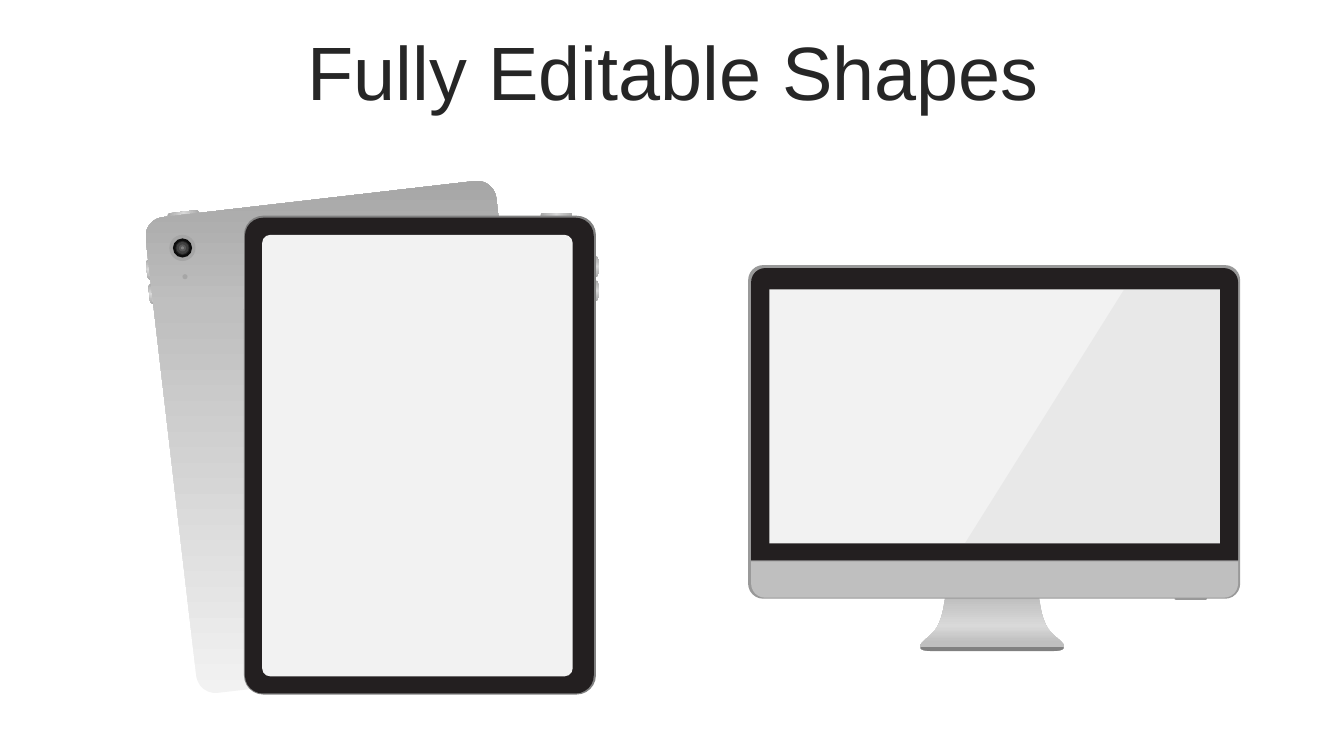
from pptx import Presentation
from pptx.dml.color import RGBColor
from pptx.enum.shapes import MSO_SHAPE
from pptx.enum.text import MSO_ANCHOR, PP_ALIGN
from pptx.oxml import parse_xml
from pptx.oxml.ns import qn
from pptx.util import Inches, Pt
from lxml import etree

NS = "http://schemas.openxmlformats.org/drawingml/2006/main"
INK, BLACK = RGBColor(0x26, 0x26, 0x26), RGBColor(0x23, 0x1F, 0x20)
EDGE, RIM = RGBColor(0x80, 0x80, 0x80), RGBColor(0x99, 0x99, 0x99)
SILVER, GLASS = RGBColor(0xBF, 0xBF, 0xBF), RGBColor(0xF2, 0xF2, 0xF2)
LENS = RGBColor(0xA6, 0xA6, 0xA6)
ROUND, TABBED, OVAL = (MSO_SHAPE.ROUNDED_RECTANGLE, MSO_SHAPE.ROUND_2_SAME_RECTANGLE,
                       MSO_SHAPE.OVAL)

# Gradients: angle, then (percent, colour) stops
METAL = [(0, "A6A6A6"), (25, "BFBFBF"), (50, "D9D9D9"), (75, "BFBFBF"), (100, "A6A6A6")]
ACROSS, UPWARD = (0, METAL), (270, METAL)
SHELL = (90, [(0, "F2F2F2"), (75, "BFBFBF"), (100, "A6A6A6")])
STEEL = (270, [(0, "BFBFBF"), (53, "D9D9D9"), (83, "BFBFBF"), (100, "BFBFBF")])

TITLE = "Fully Editable Shapes"
TILT = -6.6

# Tablet parts: left, top, width, height, corner radius, fill
REAR = [
    (1.66, 2.10, 0.32, 0.11, 0.03, ACROSS),
    (1.48, 2.81, 0.08, 0.21, 0.04, UPWARD),
    (1.455, 2.57, 0.08, 0.21, 0.04, UPWARD),
    (1.685, 1.96, 3.5, 4.75, 0.19, SHELL),
]
FRONT = [
    (5.36, 2.11, 0.32, 0.11, 0.03, ACROSS),
    (5.86, 2.78, 0.08, 0.21, 0.04, UPWARD),
    (5.86, 2.54, 0.08, 0.21, 0.04, UPWARD),
    (2.42, 2.14, 3.49, 4.75, 0.19, EDGE),
    (2.43, 2.16, 3.46, 4.72, 0.18, BLACK),
    (2.6, 2.33, 3.08, 4.38, 0.08, GLASS),
]
# Camera rings: diameter and grey level, around one centre
CAMERA = (1.81, 2.46)
RINGS = [(0.26, 0xA6), (0.19, 0x0D), (0.14, 0x26), (0.12, 0x40), (0.07, 0x59), (0.03, 0x80)]
MIC = (1.81, 2.72, 0.05, 0.05)

# Monitor: the stand and foot are Bezier halves, x measured from the axis
AXIS = 9.84
STAND = [[(0.47, 5.93), (0.47, 5.93), (0.48, 6.16), (0.58, 6.27)],
         [(0.58, 6.27), (0.68, 6.37), (0.84, 6.46), (0.56, 6.46)]]
FOOT = [[(0.71, 6.42), (0.71, 6.45), (0.67, 6.46), (0.56, 6.46)]]
GLARE = [(11.15, 2.87), (12.1, 2.87), (12.1, 5.39), (9.57, 5.39)]


def paint(shape, fill):
    """Fill with a plain colour or an (angle, stops) gradient, with no outline."""
    shape.shadow.inherit = False
    shape.line.fill.background()
    if isinstance(fill, RGBColor):
        shape.fill.solid()
        shape.fill.fore_color.rgb = fill
        return
    angle, stops = fill
    marks = "".join(f'<a:gs pos="{at * 1000}"><a:srgbClr val="{tone}"/></a:gs>'
                    for at, tone in stops)
    turn = (360 - angle) % 360 * 60000
    grad = parse_xml(f'<a:gradFill xmlns:a="{NS}" rotWithShape="0"><a:gsLst>{marks}</a:gsLst>'
                     f'<a:lin ang="{turn}" scaled="0"/></a:gradFill>')
    shape.fill.background()
    old = shape._element.spPr.find(qn("a:noFill"))
    old.getparent().replace(old, grad)


def place(group, kind, box, fill, corners=(), tilt=0):
    """Add a preset shape; corners are radii in inches."""
    shape = group.shapes.add_shape(kind, *map(Inches, box))
    for i, size in enumerate(corners):
        shape.adjustments[i] = size / min(box[2:])
    shape.rotation = tilt
    paint(shape, fill)


def outline(group, points, fill):
    dots = [(Inches(x), Inches(y)) for x, y in points]
    pen = group.shapes.build_freeform(*dots[0], scale=1.0)
    pen.add_line_segments(dots[1:], close=True)
    shape = pen.convert_to_shape()
    paint(shape, fill)
    return shape


def bend(curve, steps=12):
    """Points along a cubic Bezier curve."""
    for i in range(steps + 1):
        t = i / steps
        parts = ((1 - t) ** 3, 3 * t * (1 - t) ** 2, 3 * t * t * (1 - t), t ** 3)
        yield tuple(sum(k * p[n] for k, p in zip(parts, curve)) for n in (0, 1))


def mirror(curves):
    half = [dot for curve in curves for dot in bend(curve)]
    return ([(AXIS + x, y) for x, y in half]
            + [(AXIS - x, y) for x, y in reversed(half)])


def tablet(group, parts, tilt=0):
    for *box, size, fill in parts:
        place(group, ROUND, box, fill, [size], tilt)


def monitor(group):
    outline(group, mirror(STAND), STEEL)
    place(group, ROUND, (7.42, 2.63, 4.88, 3.31), RIM, [0.15])
    place(group, TABBED, (11.65, 5.93, 0.32, 0.02), RIM, [0, 0.01])
    place(group, TABBED, (7.45, 2.66, 4.83, 2.9), BLACK, [0.14, 0])
    outline(group, mirror(FOOT), EDGE)
    place(group, TABBED, (7.45, 5.57, 4.83, 0.36), SILVER, [0, 0.14])
    place(group, MSO_SHAPE.RECTANGLE, (7.63, 2.87, 4.47, 2.52), GLASS)
    glare = outline(group, GLARE, RIM)
    tone = glare._element.spPr.find(qn("a:solidFill"))[0]
    etree.SubElement(tone, qn("a:alpha")).set("val", "10000")


def heading(slide):
    frame = slide.shapes.add_textbox(*map(Inches, (0.35, 0.36, 12.66, 0.79))).text_frame
    frame.word_wrap = True
    frame.vertical_anchor = MSO_ANCHOR.MIDDLE
    frame.text = TITLE
    line = frame.paragraphs[0]
    line.alignment = PP_ALIGN.CENTER
    line.line_spacing = 0.9
    font = line.runs[0].font
    font.name, font.size, font.color.rgb = "Arial", Pt(54), INK


def main():
    deck = Presentation()
    deck.slide_width, deck.slide_height = Inches(13.33), Inches(7.5)
    slide = deck.slides.add_slide(deck.slide_layouts[6])
    heading(slide)
    monitor(slide.shapes.add_group_shape())
    rear = slide.shapes.add_group_shape()
    tablet(rear, REAR, TILT)
    for size, grey in RINGS:
        box = (CAMERA[0] - size / 2, CAMERA[1] - size / 2, size, size)
        place(rear, OVAL, box, RGBColor(grey, grey, grey))
    place(rear, OVAL, MIC, LENS)
    tablet(slide.shapes.add_group_shape(), FRONT)
    deck.save("out.pptx")


if __name__ == "__main__":
    main()
